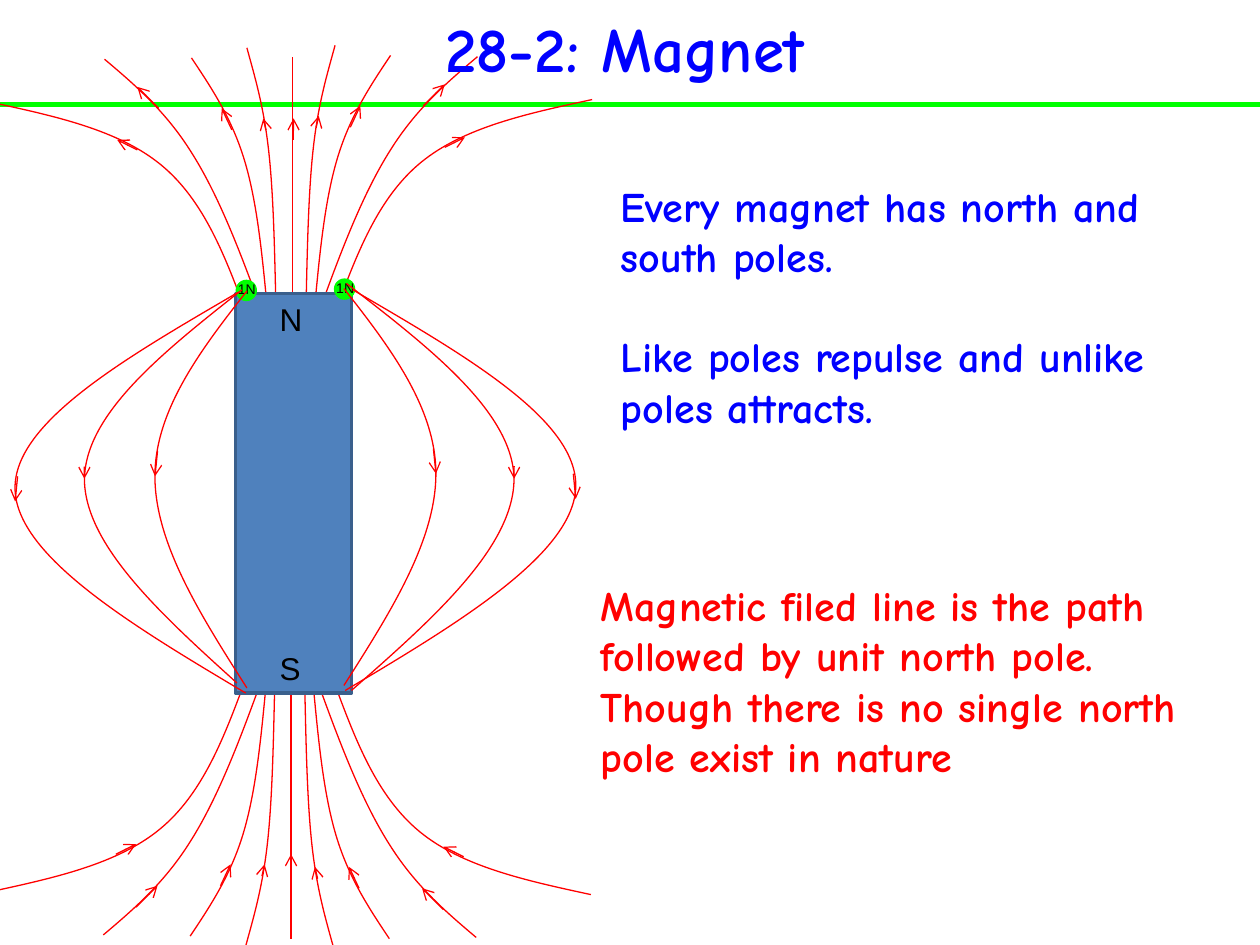
import dataclasses
import itertools

import lxml.etree
import pptx
import pptx.dml.color
import pptx.enum.shapes
import pptx.enum.text
import pptx.oxml.ns
import pptx.util

qn = pptx.oxml.ns.qn
SHAPE = pptx.enum.shapes.MSO_SHAPE
ALIGN = pptx.enum.text.PP_ALIGN
ANCHOR = pptx.enum.text.MSO_ANCHOR


@dataclasses.dataclass(frozen=True)
class Theme:
    blue: str = "0000FF"
    red: str = "FF0000"
    green: str = "00FF00"
    black: str = "000000"
    magnet: str = "4F81BD"
    magnet_edge: str = "3A5F8C"
    hand: str = "Comic Neue"
    plain: str = "Arial"
    title: int = 36
    body: int = 24
    pole: int = 18
    unit: int = 8
    field: float = 0.75
    edge: int = 2
    rule: int = 3


def inch(value):
    """Turn the inch grid of the slide into a Cm length."""
    return pptx.util.Cm(value * 2.54)


def rgb(code):
    return pptx.dml.color.RGBColor.from_string(code)


class Sketch:
    def __init__(self, page, theme):
        self.page, self.theme = page, theme

    def outline(self, line, color, width):
        line.color.rgb = rgb(color)
        line.width = pptx.util.Pt(width)

    def fill_text(self, box, texts, size, font, color, bold=False, align=ALIGN.LEFT, gap=0):
        frame = box.text_frame
        for index, text in enumerate(texts):
            para = frame.paragraphs[0] if index == 0 else frame.add_paragraph()
            para.alignment = align
            para.space_before = pptx.util.Pt(gap if index else 0)
            span = para.add_run()
            span.text = text
            formats = {"name": font, "size": pptx.util.Pt(size), "bold": bold}
            for name, value in formats.items():
                setattr(span.font, name, value)
            span.font.color.rgb = rgb(color)

    def title(self, text, left, top, width, height):
        box = self.page.shapes.title
        places = {"left": left, "top": top, "width": width, "height": height}
        for name, value in places.items():
            setattr(box, name, inch(value))
        box.text_frame.vertical_anchor = ANCHOR.MIDDLE
        self.fill_text(box, [text], self.theme.title, self.theme.hand, self.theme.blue,
                       bold=True, align=ALIGN.CENTER)
        # Bring the heading in front of the field lines
        self.page.shapes._spTree.append(box._element)

    def text(self, texts, place, size, font, color, wrap=True, **style):
        box = self.page.shapes.add_textbox(*map(inch, place))
        box.text_frame.word_wrap = wrap
        self.fill_text(box, texts, size, font, color, **style)

    def shape(self, kind, place, fill, edge=None):
        box = self.page.shapes.add_shape(kind, *map(inch, place))
        box.shadow.inherit = False
        box.fill.solid()
        box.fill.fore_color.rgb = rgb(fill)
        if edge:
            self.outline(box.line, edge, self.theme.edge)
        else:
            box.line.fill.background()

    def line(self, start, end, color, width, arrow=None):
        """Straight line; arrow is headEnd, tailEnd or None."""
        link = self.page.shapes.add_connector(
            pptx.enum.shapes.MSO_CONNECTOR.STRAIGHT, *map(inch, (*start, *end)))
        self.outline(link.line, color, width)
        if arrow:
            stroke = link._element.spPr.find(qn("a:ln"))
            lxml.etree.SubElement(stroke, qn("a:" + arrow), type="arrow")
        lxml.etree.SubElement(link._element.spPr, qn("a:effectLst"))

    def arrow(self, start, end, arrow="tailEnd"):
        self.line(start, end, self.theme.red, self.theme.field, arrow)

    def curve(self, points):
        """Smooth line: a start, then two handles and an end for each piece."""
        first, *rest = [(inch(x), inch(y)) for x, y in points]
        builder = self.page.shapes.build_freeform(*first)
        builder.add_line_segments(rest, close=False)
        box = builder.convert_to_shape()
        box.shadow.inherit = False
        box.fill.background()
        self.outline(box.line, self.theme.red, self.theme.field)
        # Join each three straight steps into one Bezier piece
        steps = list(box._element.iter(qn("a:lnTo")))
        for index in range(0, len(steps), 3):
            bezier = lxml.etree.Element(qn("a:cubicBezTo"))
            steps[index].addprevious(bezier)
            for step in steps[index:index + 3]:
                bezier.append(step[0])
                step.getparent().remove(step)


# Lower left quarter of the fan; the other quarters are reflections of it
FAN_CURVES = [
    [(2.05, 5.47), (1.89, 5.91), (1.72, 6.35), (1.51, 6.68), (1.31, 7), (1.07, 7.21), (0.82, 7.42)],
    [(1.95, 5.39), (1.78, 5.85), (1.61, 6.3), (1.27, 6.58), (0.93, 6.86), (0.42, 6.97), (-0.09, 7.08)],
    [(2.18, 5.47), (2.17, 5.93), (2.16, 6.38), (2.12, 6.72), (2.08, 7.06), (2.01, 7.29), (1.95, 7.51)],
    [(2.11, 5.46), (2.07, 5.88), (2.03, 6.29), (1.93, 6.62), (1.83, 6.95), (1.67, 7.19), (1.51, 7.43)],
]
FAN_ARROWS = [
    [(0.92, 6.78), (1.08, 6.7)], [(1.08, 7.2), (1.25, 7.03)],
    [(1.75, 7.03), (1.83, 6.86)], [(2.08, 6.95), (2.1, 6.86)],
]
# Left loops; the right ones are reflections
LOOP_CURVES = [
    [(1.96, 5.46), (1.59, 4.88), (1.23, 4.31), (1.23, 3.78), (1.23, 3.26), (1.59, 2.78), (1.96, 2.31)],
    [(1.95, 5.5), (1.04, 4.96), (0.13, 4.41), (0.12, 3.88), (0.11, 3.35), (1, 2.84), (1.89, 2.32)],
]
LOOP_ARROWS = [[(1.25, 3.58), (1.23, 3.78)], [(0.14, 3.78), (0.12, 3.98)]]
# Path of each unit pole, from its ball down to the S end
UNIT_CURVES = [
    [(1.92, 2.3), (1.3, 2.79), (0.68, 3.28), (0.67, 3.8), (0.67, 4.32), (1.27, 4.87), (1.88, 5.42)],
    [(2.75, 2.25), (3.41, 2.76), (4.07, 3.27), (4.08, 3.8), (4.08, 4.34), (3.44, 4.91), (2.79, 5.48)],
]


def fan_points(points, right, top):
    placed = []
    for x, y in points:
        x, y = (4.6 - x if right else x), (y + 0.02 if right else y)
        placed.append((x + 0.01, 7.89 - y) if top else (x, y))
    return placed


def loop_points(points, right):
    return [(4.69 - x, y - 0.02) if right else (x, y) for x, y in points]


def main():
    deck = pptx.Presentation()
    deck.slide_width, deck.slide_height = inch(10), inch(7.5)
    theme = Theme()
    sketch = Sketch(deck.slides.add_slide(deck.slide_layouts[5]), theme)

    # Rule under the heading
    sketch.line((0, 0.83), (10, 0.83), theme.green, theme.rule)

    # Field lines fanning out of both ends
    for top, right in itertools.product((False, True), repeat=2):
        for points in FAN_CURVES:
            sketch.curve(fan_points(points, right, top))
        for points in FAN_ARROWS:
            sketch.arrow(*fan_points(points, right, top), "headEnd" if top else "tailEnd")
    sketch.arrow((2.31, 5.47), (2.31, 7.45), None)
    sketch.arrow((2.31, 6.95), (2.31, 6.78))
    sketch.arrow((2.32, 2.42), (2.32, 0.45), None)
    sketch.arrow((2.33, 1.11), (2.33, 0.94))

    # Heading and statements
    sketch.title("28-2: Magnet", 0.17, 0, 9.58, 0.75)
    sketch.text(["Every magnet has north and south poles.",
                 "Like poles repulse and unlike poles attracts."],
                (4.83, 1.38, 5, 2.12), theme.body, theme.hand, theme.blue, bold=True, gap=28.6)
    sketch.text(["Magnetic filed line is the path followed by unit north pole. "
                 "Though there is no single north pole exist in nature"],
                (4.67, 4.55, 5, 2.12), theme.body, theme.hand, theme.red, bold=True)

    # Bar magnet with its poles
    sketch.shape(SHAPE.RECTANGLE, (1.87, 2.33, 0.92, 3.17), theme.magnet, theme.magnet_edge)
    for pole, top in (("N", 2.33), ("S", 5.1)):
        sketch.text([pole], (2.12, top, 0.38, 0.4), theme.pole, theme.plain, theme.black, wrap=False)

    # Unit poles and their paths
    for (left, top), points, tail in zip([(1.87, 2.22), (2.65, 2.21)], UNIT_CURVES, (3.74, 3.7)):
        sketch.shape(SHAPE.OVAL, (left, top, 0.17, 0.17), theme.green)
        sketch.text(["1N"], (left - 0.08, top - 0.04, 0.35, 0.24),
                    theme.unit, theme.plain, theme.black, wrap=False)
        sketch.curve(points)
        side = points[3]
        sketch.arrow((side[0], tail), side)

    # Loops from pole to pole
    for right in (False, True):
        for points in LOOP_CURVES:
            sketch.curve(loop_points(points, right))
        for points in LOOP_ARROWS:
            sketch.arrow(*loop_points(points, right))

    deck.save("out.pptx")


if __name__ == "__main__":
    main()
